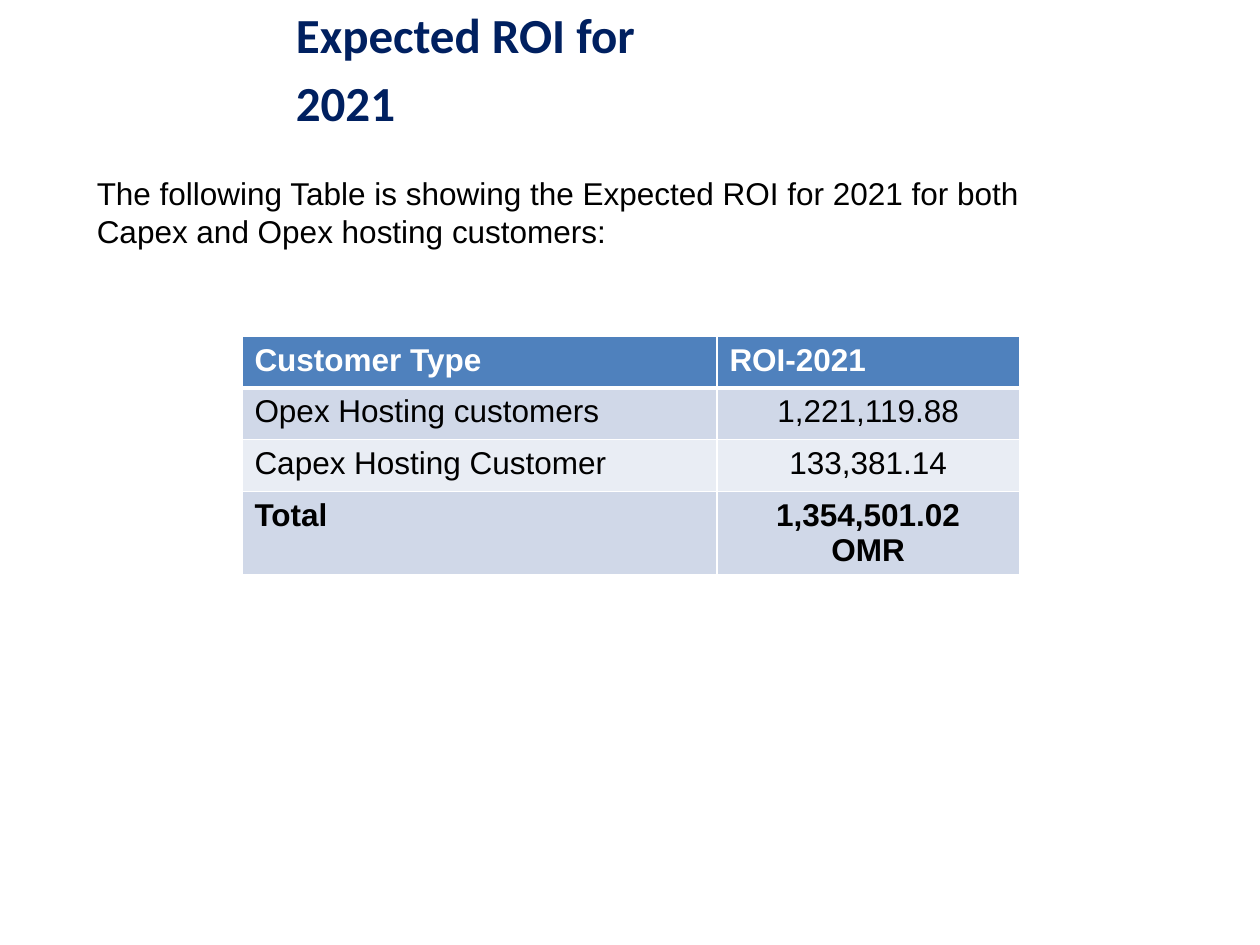
from dataclasses import dataclass

from lxml import etree
from pptx import Presentation
from pptx.dml.color import RGBColor
from pptx.enum.text import MSO_AUTO_SIZE, PP_ALIGN
from pptx.oxml.ns import qn
from pptx.util import Inches, Pt

LEFT = PP_ALIGN.LEFT
CENTER = PP_ALIGN.CENTER
GROW = MSO_AUTO_SIZE.SHAPE_TO_FIT_TEXT


@dataclass(frozen=True)
class Theme:
    heading_font: str = "Calibri"
    body_font: str = "Arial"
    heading_size: int = 28
    body_size: int = 18
    navy: str = "002060"
    black: str = "000000"
    white: str = "FFFFFF"
    header_fill: str = "4F81BD"
    band_fills: tuple = ("D0D8E8", "E9EDF4")
    thin_line: int = 1
    thick_line: int = 3


THEME = Theme()
ROI_ROWS = [
    ("Customer Type", "ROI-2021"),
    ("Opex Hosting customers", "1,221,119.88"),
    ("Capex Hosting Customer", "133,381.14"),
    ("Total", "1,354,501.02\nOMR"),
]
COLUMN_WIDTHS = (3.77, 2.4)
ROW_HEIGHT = 0.41


def format_text(frame, font, size, color, bold=False, align=LEFT):
    for paragraph in frame.paragraphs:
        paragraph.alignment = align
        for span in paragraph.runs:
            span.font.name = font
            span.font.size = Pt(size)
            span.font.bold = bold
            span.font.color.rgb = RGBColor.from_string(color)


def add_text(page, text, left, top, width, height, font, size, color, bold=False):
    box = page.shapes.add_textbox(Inches(left), Inches(top), Inches(width), Inches(height))
    frame = box.text_frame
    frame.word_wrap = True
    frame.auto_size = GROW
    frame.text = text
    format_text(frame, font, size, color, bold)
    return frame


def set_borders(cell, widths):
    properties = cell._tc.get_or_add_tcPr()
    for side, width in widths.items():
        line = etree.SubElement(properties, qn(f"a:ln{side}"), w=str(Pt(width)))
        fill = etree.SubElement(line, qn("a:solidFill"))
        etree.SubElement(fill, qn("a:srgbClr"), val=THEME.white)


def style_cell(cell, row, column):
    header = row == 0
    total = row == len(ROI_ROWS) - 1
    set_borders(cell, {
        "L": THEME.thin_line,
        "R": THEME.thin_line,
        "T": THEME.thick_line if row == 1 else THEME.thin_line,
        "B": THEME.thick_line if header else THEME.thin_line,
    })
    fill = THEME.header_fill if header else THEME.band_fills[(row - 1) % 2]
    cell.fill.solid()
    cell.fill.fore_color.rgb = RGBColor.from_string(fill)
    format_text(
        cell.text_frame, THEME.body_font, THEME.body_size,
        THEME.white if header else THEME.black,
        bold=header or total,
        align=CENTER if column == 1 and not header else LEFT,
    )


def add_roi_table(page, left, top):
    table = page.shapes.add_table(
        len(ROI_ROWS), len(COLUMN_WIDTHS), Inches(left), Inches(top),
        Inches(sum(COLUMN_WIDTHS)), Inches(ROW_HEIGHT * len(ROI_ROWS)),
    ).table
    for column, width in zip(table.columns, COLUMN_WIDTHS):
        column.width = Inches(width)
    for row, values in enumerate(ROI_ROWS):
        table.rows[row].height = Inches(ROW_HEIGHT)
        for column, value in enumerate(values):
            cell = table.cell(row, column)
            cell.text_frame.text = value
            style_cell(cell, row, column)


def main():
    deck = Presentation()
    deck.slide_width, deck.slide_height = Inches(10), Inches(7.5)
    page = deck.slides.add_slide(deck.slide_layouts[6])
    add_roi_table(page, 1.92, 2.67)
    title = add_text(page, "Expected ROI for 2021", 2.25, -0.08, 3.65, 0.61,
                     THEME.heading_font, THEME.heading_size, THEME.navy, bold=True)
    title.paragraphs[0].line_spacing = 1.15
    add_text(page, "The following Table is showing the Expected ROI for 2021 for both "
             "Capex and Opex hosting customers:", 0.67, 1.33, 8, 0.71,
             THEME.body_font, THEME.body_size, THEME.black)
    deck.save("out.pptx")


if __name__ == "__main__":
    main()
